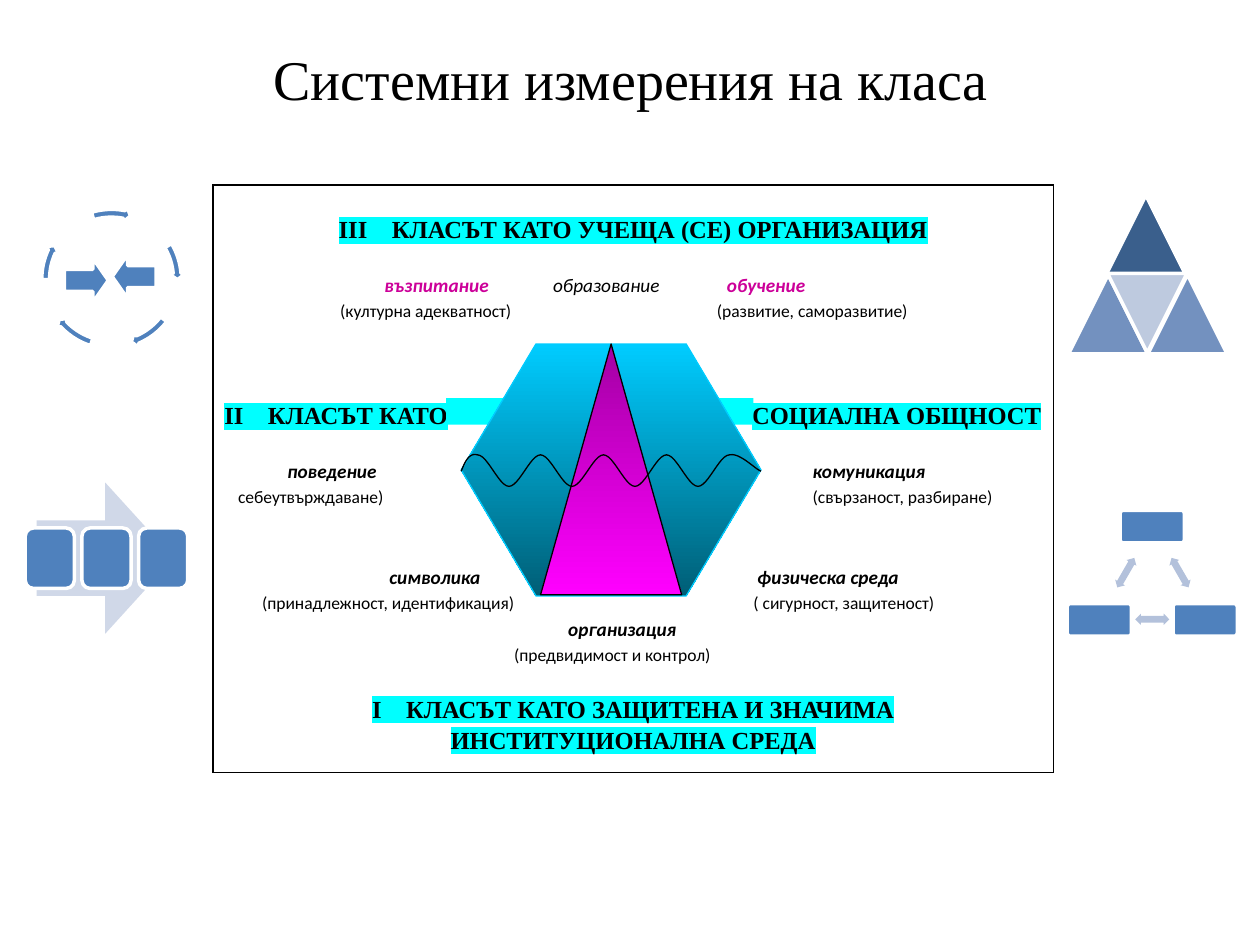
from lxml import etree
from pptx import Presentation
from pptx.dml.color import RGBColor
from pptx.enum import shapes as kinds, text as txt
from pptx.oxml import ns
from pptx.util import Inches, Pt

BLACK = RGBColor(0, 0, 0)
WHITE = RGBColor(255, 255, 255)
CYAN = RGBColor(0x00, 0xFF, 0xFF)
PINK = RGBColor(0xCC, 0x00, 0x99)
SKY = RGBColor(0x00, 0xCC, 0xFF)
DEEP_SKY = RGBColor(0x00, 0x5E, 0x76)
PURPLE = RGBColor(0xA3, 0x00, 0xA3)
MAGENTA = RGBColor(0xFF, 0x00, 0xFF)
BLUE = RGBColor(0x4F, 0x81, 0xBD)
DARK_BLUE = RGBColor(0x3A, 0x5F, 0x8C)
MID_BLUE = RGBColor(0x73, 0x91, 0xBF)
PALE_BLUE = RGBColor(0xBE, 0xCA, 0xDF)
ARROW_BLUE = RGBColor(0xB3, 0xC1, 0xDB)
BACK_BLUE = RGBColor(0xD0, 0xD8, 0xE8)
SERIF, SANS = "Times New Roman", "Calibri"
SHAPE = kinds.MSO_SHAPE

TERM = (11, True, True, BLACK)
PINK_TERM = (11, True, True, PINK)
PLAIN_TERM = (11, False, True, BLACK)
NOTE = (10, False, False, BLACK)

HEADING_ROWS = {
    "learning": (0, ["III\u2003КЛАСЪТ КАТО УЧЕЩА (СЕ) ОРГАНИЗАЦИЯ"]),
    "social": (43.4, [(0.02, "II\u2003КЛАСЪТ КАТО"), (4.21, "СОЦИАЛНА ОБЩНОСТ")]),
    "safe": (15, ["I\u2003КЛАСЪТ КАТО ЗАЩИТЕНА И ЗНАЧИМА"]),
    "institution": (0, ["ИНСТИТУЦИОНАЛНА СРЕДА"]),
}
DETAIL_ROWS = {
    "learning": [
        (15.4, [(1.29, "възпитание", PINK_TERM), (2.63, "образование", PLAIN_TERM),
                (4.01, "обучение", PINK_TERM)]),
        (0, [(0.94, "(културна адекватност)", NOTE),
             (3.93, "(развитие, саморазвитие)", NOTE)]),
    ],
    "social": [
        (15.4, [(0.52, "поведение", TERM), (4.69, "комуникация", TERM)]),
        (0, [(0.13, "себеутвърждаване)", NOTE), (4.69, "(свързаност, разбиране)", NOTE)]),
        (31, [(1.33, "символика", TERM), (4.25, "физическа среда", TERM)]),
        (0, [(0.32, "(принадлежност, идентификация)", NOTE),
             (4.22, "( сигурност, защитеност)", NOTE)]),
        (0, [(2.75, "организация", TERM)]),
        (0, [(2.32, "(предвидимост и контрол)", NOTE)]),
    ],
}


def add_part(parts, kind, box, fill, line=None, width=2, turn=0, adjust=()):
    """Add one preset shape; a pair of colours gives a downward gradient."""
    part = parts.add_shape(kind, *map(Inches, box))
    part.shadow.inherit = False
    part.rotation = turn
    for index, value in enumerate(adjust):
        part.adjustments[index] = value
    if isinstance(fill, list):
        part.fill.gradient()
        part.fill.gradient_angle = 270
        for stop, position, color in zip(part.fill.gradient_stops, (0, 1), fill):
            stop.position, stop.color.rgb = position, color
    else:
        part.fill.solid()
        part.fill.fore_color.rgb = fill
    if line is None:
        part.line.fill.background()
    else:
        part.line.color.rgb = line
        part.line.width = Pt(width)
    return part


def style_run(run, font, size, bold, italic, color, marked=False):
    """Format a run, with a cyan highlight when marked."""
    run.font.size, run.font.bold, run.font.italic = Pt(size), bold, italic
    run.font.color.rgb = color
    if marked:
        highlight = etree.SubElement(run.font._element, ns.qn("a:highlight"))
        etree.SubElement(highlight, ns.qn("a:srgbClr"), val=str(CYAN))
    run.font.name = font


def add_row(frame, gap, pieces, heading=False):
    """Write one line of the cell, each positioned piece at its own tab stop."""
    first = frame.paragraphs[0]
    line = frame.add_paragraph() if first.runs else first
    line.line_spacing = 1.15
    line.space_before = Pt(gap)
    stops = [piece[0] for piece in pieces if isinstance(piece, tuple)]
    if stops:
        tabs = etree.SubElement(line._p.get_or_add_pPr(), ns.qn("a:tabLst"))
        for stop in stops:
            etree.SubElement(tabs, ns.qn("a:tab"), pos=str(Inches(stop)), algn="l")
    else:
        line.alignment = txt.PP_ALIGN.CENTER
    for piece in pieces:
        run = line.add_run()
        run.text = "\t" + piece[1] if stops else piece
        if heading:
            style_run(run, SERIF, 14, True, False, BLACK, True)
        else:
            style_run(run, SANS, *piece[2])


def add_dimensions(slide, left, top, width, height):
    """Place the framed table with the three dimensions of the class."""
    table = slide.shapes.add_table(
        1, 1, *map(Inches, (left, top, width, height))).table
    table.first_row = table.horz_banding = False
    cell = table.cell(0, 0)
    cell.margin_left = cell.margin_right = Inches(0.07)
    cell.margin_top, cell.margin_bottom = Inches(0.22), 0
    properties = cell._tc.get_or_add_tcPr()
    for side in ("lnL", "lnR", "lnT", "lnB"):
        border = etree.SubElement(properties, ns.qn("a:" + side), w=str(Pt(1)))
        paint = etree.SubElement(border, ns.qn("a:solidFill"))
        etree.SubElement(paint, ns.qn("a:srgbClr"), val=str(BLACK))
    cell.fill.solid()
    cell.fill.fore_color.rgb = WHITE
    for name, (gap, pieces) in HEADING_ROWS.items():
        add_row(cell.text_frame, gap, pieces, heading=True)
        for row in DETAIL_ROWS.get(name, []):
            add_row(cell.text_frame, *row)


def bezier(start, first, second, end, steps=12):
    """Return points along a cubic curve, without its start."""
    return [tuple((1 - t) ** 3 * a + 3 * (1 - t) ** 2 * t * b
                  + 3 * (1 - t) * t ** 2 * c + t ** 3 * d
                  for a, b, c, d in zip(start, first, second, end))
            for t in (step / steps for step in range(1, steps + 1))]


def add_crystal(slide, left, top, width, height):
    """Place the hexagon, its inner triangle and the wave across them."""
    add_part(slide.shapes, SHAPE.RECTANGLE, (left - 0.12, top + 0.43, 2.44, 0.21), CYAN)
    add_part(slide.shapes, SHAPE.HEXAGON, (left, top, width, height),
             [SKY, DEEP_SKY], SKY, 0.75, adjust=(0.297, 1.155))
    add_part(slide.shapes, SHAPE.ISOSCELES_TRIANGLE, (left + 0.63, top, 1.12, 1.99),
             [PURPLE, MAGENTA], BLACK, 0.75)
    crest, trough, middle = 0.88, 1.13, 1.01
    knots = [(0.13 + 0.25 * i, trough if i % 2 else crest) for i in range(9)]
    curves = [((0, middle), (0.03, 0.94), (0.06, 0.86), knots[0])]
    for a, b in zip(knots, knots[1:]):
        curves.append((a, (a[0] + 0.08, a[1]), (b[0] - 0.08, b[1]), b))
    curves.append((knots[-1], (2.21, 0.86), (2.33, 0.99), (width, middle)))
    points = [(Inches(left + x), Inches(top + y))
              for curve in curves for x, y in bezier(*curve)]
    builder = slide.shapes.build_freeform(Inches(left), Inches(top + middle))
    builder.add_line_segments(points, close=False)
    wave = builder.convert_to_shape()
    wave.shadow.inherit = False
    wave.fill.background()
    wave.line.color.rgb, wave.line.width = BLACK, Pt(0.75)


def add_pyramid(slide, left, top, side=0.63):
    """Place the pyramid of four triangles."""
    parts = slide.shapes.add_group_shape().shapes
    for x, y, turn, color in ((0.3, 0, 0, DARK_BLUE), (0, side, 0, MID_BLUE),
                              (0.31, 0.62, 180, PALE_BLUE), (side, side, 0, MID_BLUE)):
        add_part(parts, SHAPE.ISOSCELES_TRIANGLE, (left + x, top + y, side, side),
                 color, WHITE, turn=turn)


def add_triad(slide, left, top):
    """Place three boxes joined by double arrows."""
    parts = slide.shapes.add_group_shape().shapes
    for x, y in ((0.42, 0), (0.84, 0.74), (0, 0.74)):
        add_part(parts, SHAPE.ROUNDED_RECTANGLE, (left + x, top + y, 0.51, 0.26),
                 BLUE, WHITE, adjust=(0.1,))
    for x, y, turn in ((0.76, 0.45, 60), (0.54, 0.82, 180), (0.33, 0.45, 300)):
        add_part(parts, SHAPE.LEFT_RIGHT_ARROW, (left + x, top + y, 0.27, 0.09),
                 ARROW_BLUE, turn=turn, adjust=(0.6, 0.5))


def add_cycle(slide, left, top, size=1.19):
    """Place the ring of curved arrows around two facing arrows."""
    ring = slide.shapes.add_group_shape().shapes
    for end, start in ((212.93, 197.67), (40.14, 22.54), (82.1, 64.5),
                       (122.98, 107.71), (168.65, 151.99)):
        add_part(ring, SHAPE.CIRCULAR_ARROW, (left, top, size, size), BLUE, WHITE,
                 adjust=(0.052, 3.36, end, start, 0.061))
    pair = slide.shapes.add_group_shape().shapes
    for x, y, turn in ((0.22, 0.43, 270), (0.6, 0.4, 90)):
        add_part(pair, SHAPE.DOWN_ARROW, (left + x, top + y, 0.35, 0.35), BLUE, WHITE,
                 turn=turn, adjust=(0.5, 0.35))


def add_process(slide, left, top):
    """Place three steps over a broad arrow."""
    parts = slide.shapes.add_group_shape().shapes
    add_part(parts, SHAPE.RIGHT_ARROW, (left + 0.09, top, 1.09, 1.2), BACK_BLUE)
    for step in range(3):
        add_part(parts, SHAPE.ROUNDED_RECTANGLE,
                 (left + 0.45 * step, top + 0.36, 0.39, 0.48), BLUE, WHITE)


def add_title(slide, left, top, width, height):
    """Place the slide title in its placeholder."""
    title = slide.shapes.title
    title.left, title.top, title.width, title.height = map(
        Inches, (left, top, width, height))
    frame = title.text_frame
    frame.text = "Системни измерения на класа"
    frame.vertical_anchor = txt.MSO_ANCHOR.MIDDLE
    frame.margin_bottom = Inches(0.48)
    frame.paragraphs[0].alignment = txt.PP_ALIGN.CENTER
    style_run(frame.paragraphs[0].runs[0], SERIF, 32, False, False, BLACK)


def main():
    """Build the slide and save it."""
    deck = Presentation()
    deck.slide_width, deck.slide_height = Inches(10), Inches(7.5)
    slide = deck.slides.add_slide(deck.slide_layouts[5])
    add_dimensions(slide, 1.69, 1.47, 6.67, 4.66)
    add_crystal(slide, 3.66, 2.73, 2.38, 2)
    add_title(slide, 0.51, 0.21, 9, 1.25)
    add_pyramid(slide, 8.48, 1.55)
    add_triad(slide, 8.47, 4.05)
    add_cycle(slide, 0.29, 1.62)
    add_process(slide, 0.2, 3.83)
    deck.save("out.pptx")


if __name__ == "__main__":
    main()
